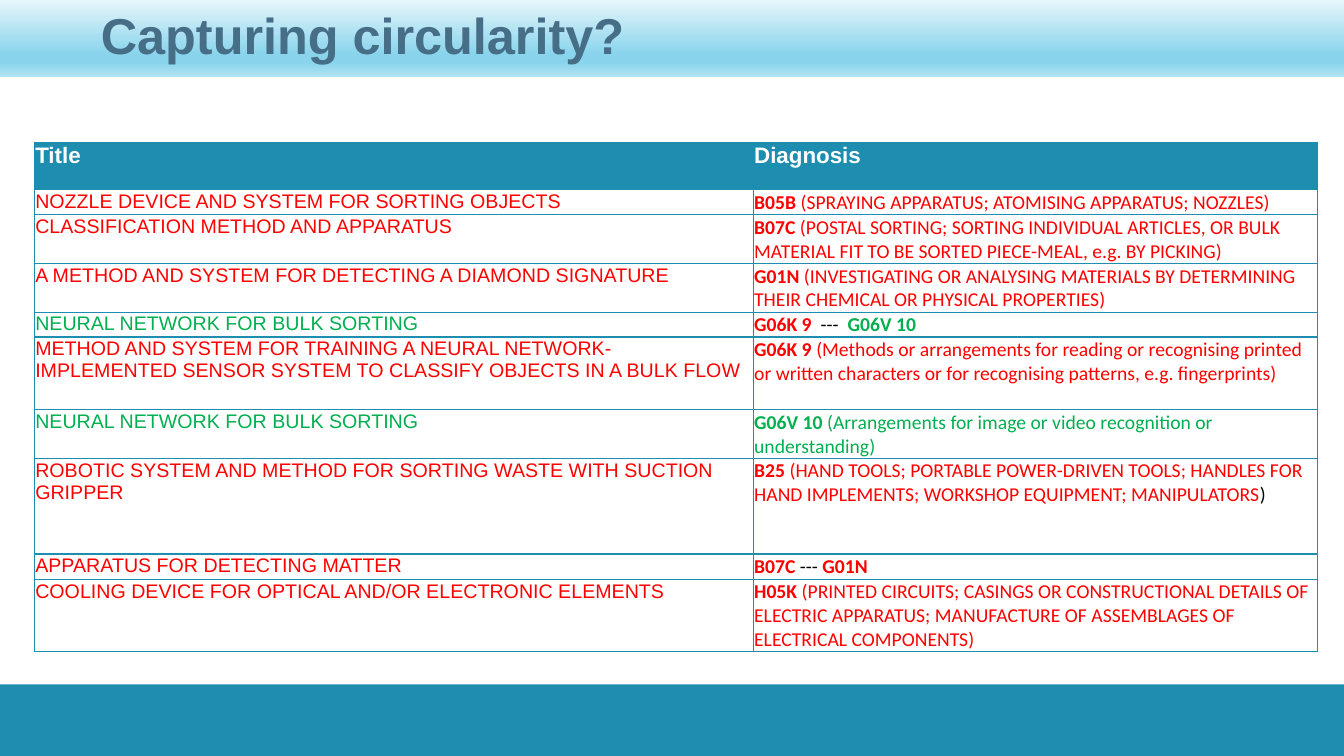
import pptx
import pptx.dml.color
import pptx.enum.shapes
import pptx.enum.text
import pptx.oxml
import pptx.oxml.ns
import pptx.util
from pptx.util import Inches

TEAL, SLATE, WHITE = "1D8DB0", "466E87", "FFFFFF"
RED, GREEN, BLACK = "FF0000", "00B050", "000000"

HEADING = "Capturing circularity?"
BANNER_STOPS = [(0, "F2FAFD"), (74, "89D4EC"), (83, "89D4EC"), (100, "B0E2F2")]
HEADERS = ["Title", "Diagnosis"]
COLUMN_WIDTHS = [7.13, 5.6]
HEADER_HEIGHT = 0.47

PATENTS = [
    (0.25, "NOZZLE DEVICE AND SYSTEM FOR SORTING OBJECTS", RED,
     [("B05B", RED, True),
      (" (SPRAYING APPARATUS; ATOMISING APPARATUS; NOZZLES)", RED, False)]),
    (0.48, "CLASSIFICATION METHOD AND APPARATUS", RED,
     [("B07C", RED, True),
      (" (POSTAL SORTING; SORTING INDIVIDUAL ARTICLES, OR BULK MATERIAL FIT "
       "TO BE SORTED PIECE-MEAL, e.g. BY PICKING)", RED, False)]),
    (0.48, "A METHOD AND SYSTEM FOR DETECTING A DIAMOND SIGNATURE", RED,
     [("G01N", RED, True),
      (" (INVESTIGATING OR ANALYSING MATERIALS BY DETERMINING THEIR CHEMICAL "
       "OR PHYSICAL PROPERTIES)", RED, False)]),
    (0.24, "NEURAL NETWORK FOR BULK SORTING", GREEN,
     [("G06K 9  ", RED, True), ("---  ", BLACK, False), ("G06V 10", GREEN, True)]),
    (0.72, "METHOD AND SYSTEM FOR TRAINING A NEURAL NETWORK-IMPLEMENTED SENSOR "
     "SYSTEM TO CLASSIFY OBJECTS IN A BULK FLOW", RED,
     [("G06K 9 ", RED, True),
      ("(Methods or arrangements for reading or recognising printed or written "
       "characters or for recognising patterns, e.g. fingerprints)", RED, False)]),
    (0.48, "NEURAL NETWORK FOR BULK SORTING", GREEN,
     [("G06V 10", GREEN, True),
      (" (Arrangements for image or video recognition or understanding)", GREEN, False)]),
    (0.95, "ROBOTIC SYSTEM AND METHOD FOR SORTING WASTE WITH SUCTION GRIPPER", RED,
     [("B25 ", RED, True),
      ("(HAND TOOLS; PORTABLE POWER-DRIVEN TOOLS; HANDLES FOR HAND IMPLEMENTS; "
       "WORKSHOP EQUIPMENT; MANIPULATORS", RED, False),
      (")", BLACK, False)]),
    (0.25, "APPARATUS FOR DETECTING MATTER", RED,
     [("B07C", RED, True), (" --- ", BLACK, False), ("G01N", RED, True)]),
    (0.72, "COOLING DEVICE FOR OPTICAL AND/OR ELECTRONIC ELEMENTS", RED,
     [("H05K", RED, True),
      (" (PRINTED CIRCUITS; CASINGS OR CONSTRUCTIONAL DETAILS OF ELECTRIC "
       "APPARATUS; MANUFACTURE OF ASSEMBLAGES OF ELECTRICAL COMPONENTS)", RED, False)]),
]


def color(value):
    return pptx.dml.color.RGBColor.from_string(value)


def add_run(paragraph, text, font_name, size, value, bold):
    run = paragraph.add_run()
    run.text = text
    run.font.name = font_name
    run.font.size = pptx.util.Pt(size)
    run.font.bold = bold
    run.font.color.rgb = color(value)


def add_band(slide, top, height):
    shape = slide.shapes.add_shape(
        pptx.enum.shapes.MSO_SHAPE.RECTANGLE, 0, Inches(top), Inches(13.33), Inches(height))
    shape.shadow.inherit = False
    shape.line.fill.background()
    return shape


def add_banner(slide):
    banner = add_band(slide, -0.07, 0.83)
    banner.fill.gradient()
    banner.fill.gradient_angle = 270
    stop_list = banner._element.spPr.find(".//" + pptx.oxml.ns.qn("a:gsLst"))
    stop_list.clear()
    for position, value in BANNER_STOPS:
        stop_list.append(pptx.oxml.parse_xml(
            f'<a:gs {pptx.oxml.ns.nsdecls("a")} pos="{position * 1000}">'
            f'<a:srgbClr val="{value}"/></a:gs>'))
    frame = banner.text_frame
    frame.margin_left = Inches(1)
    frame.margin_right = frame.margin_top = frame.margin_bottom = 0
    frame.vertical_anchor = pptx.enum.text.MSO_ANCHOR.MIDDLE
    paragraph = frame.paragraphs[0]
    paragraph.alignment = pptx.enum.text.PP_ALIGN.LEFT
    add_run(paragraph, HEADING, "Arial", 36, SLATE, True)


def fill_cell(cell, runs, background=None):
    cell.margin_left = cell.margin_right = cell.margin_top = Inches(0.01)
    cell.margin_bottom = 0
    properties = cell._tc.get_or_add_tcPr()
    for side in ("lnL", "lnR", "lnT", "lnB"):
        properties.append(pptx.oxml.parse_xml(
            f'<a:{side} {pptx.oxml.ns.nsdecls("a")} w="12700"><a:solidFill>'
            f'<a:srgbClr val="{TEAL}"/></a:solidFill></a:{side}>'))
    if background:
        cell.fill.solid()
        cell.fill.fore_color.rgb = color(background)
    else:
        cell.fill.background()
    for run in runs:
        add_run(cell.text_frame.paragraphs[0], *run)


def add_patent_table(slide):
    heights = [HEADER_HEIGHT] + [patent[0] for patent in PATENTS]
    table = slide.shapes.add_table(
        len(heights), len(COLUMN_WIDTHS), Inches(0.34), Inches(1.41),
        Inches(sum(COLUMN_WIDTHS)), Inches(sum(heights))).table
    table.first_row = True
    table.horz_banding = False
    for column, width in zip(table.columns, COLUMN_WIDTHS):
        column.width = Inches(width)
    for row, height in zip(table.rows, heights):
        row.height = Inches(height)
    for index, header in enumerate(HEADERS):
        fill_cell(table.cell(0, index), [(header, "Arial", 16, WHITE, True)], TEAL)
    for index, (_, title, value, diagnosis) in enumerate(PATENTS, 1):
        fill_cell(table.cell(index, 0), [(title, "Arial", 14, value, False)])
        fill_cell(table.cell(index, 1),
                  [(text, "Calibri", 14, tint, bold) for text, tint, bold in diagnosis])


def main():
    presentation = pptx.Presentation()
    presentation.slide_width = Inches(13.33)
    presentation.slide_height = Inches(7.5)
    slide = presentation.slides.add_slide(presentation.slide_layouts[6])
    footer = add_band(slide, 6.79, 0.71)
    footer.fill.solid()
    footer.fill.fore_color.rgb = color(TEAL)
    add_banner(slide)
    add_patent_table(slide)
    presentation.save("out.pptx")


if __name__ == "__main__":
    main()
